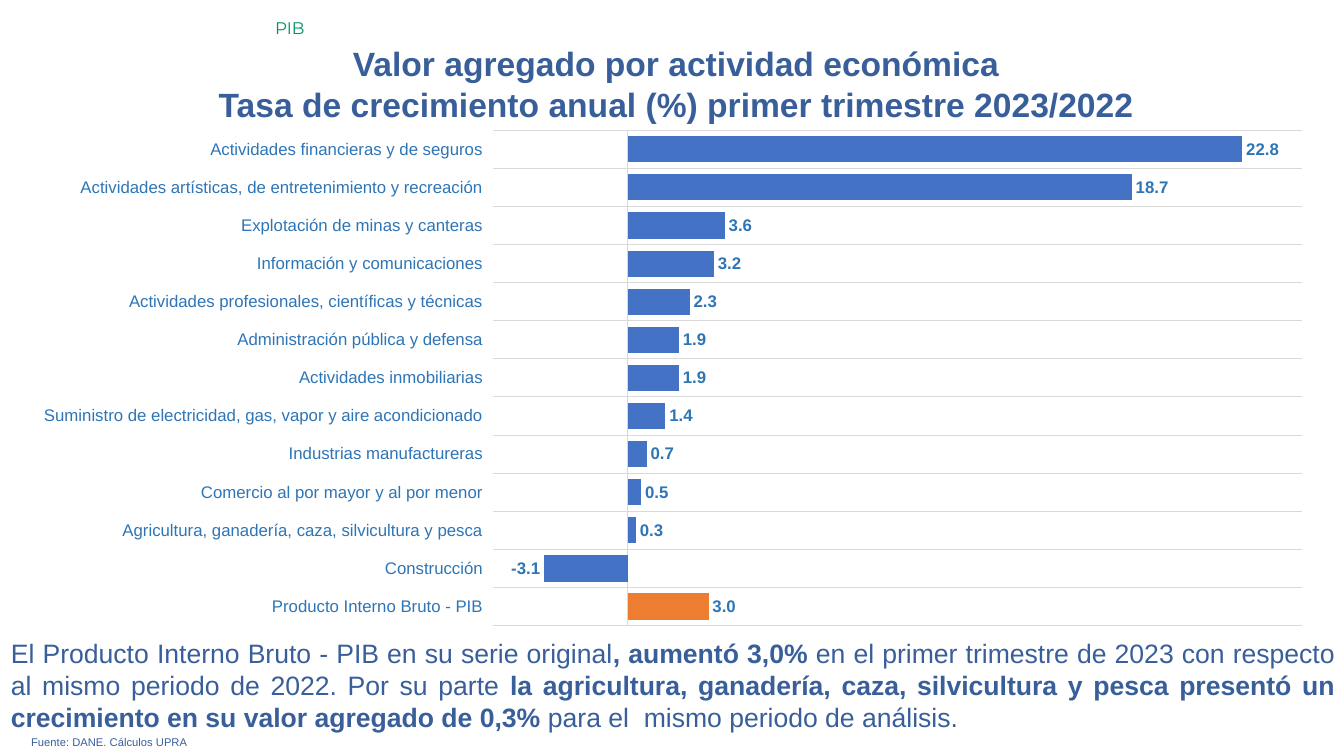
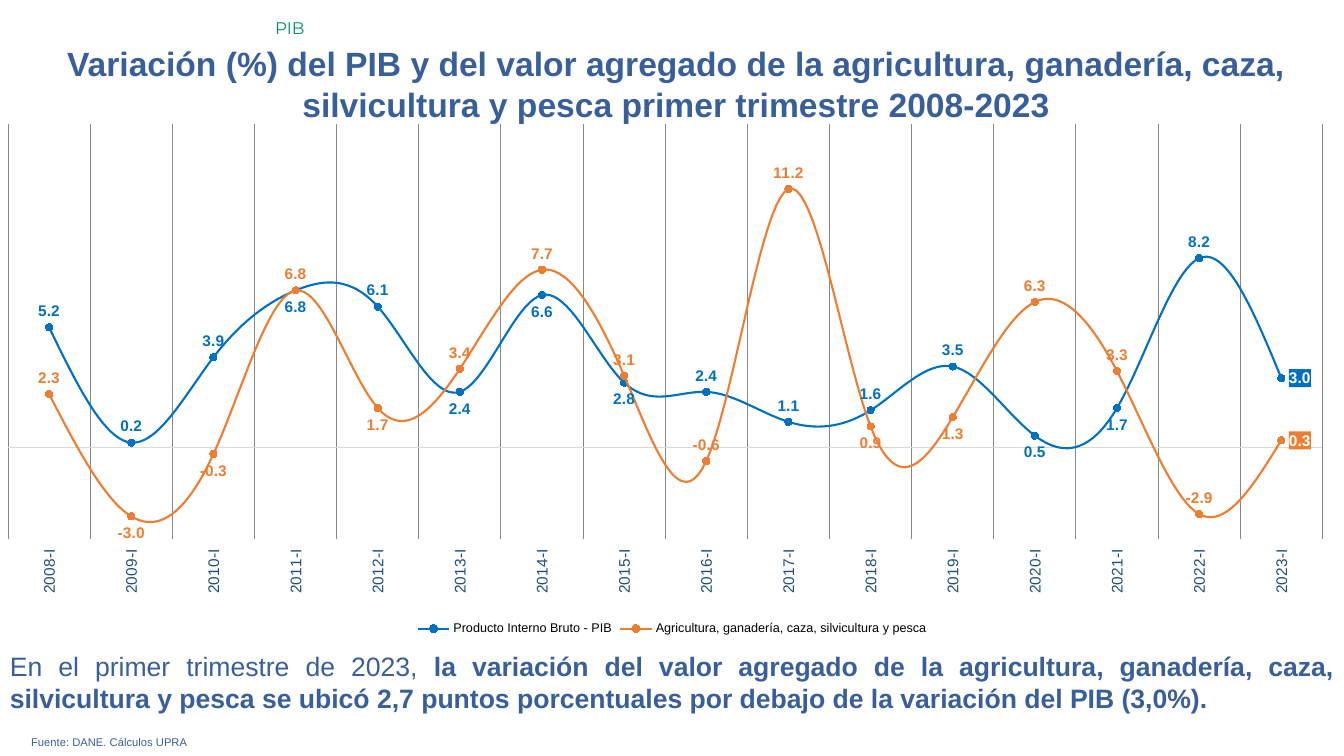
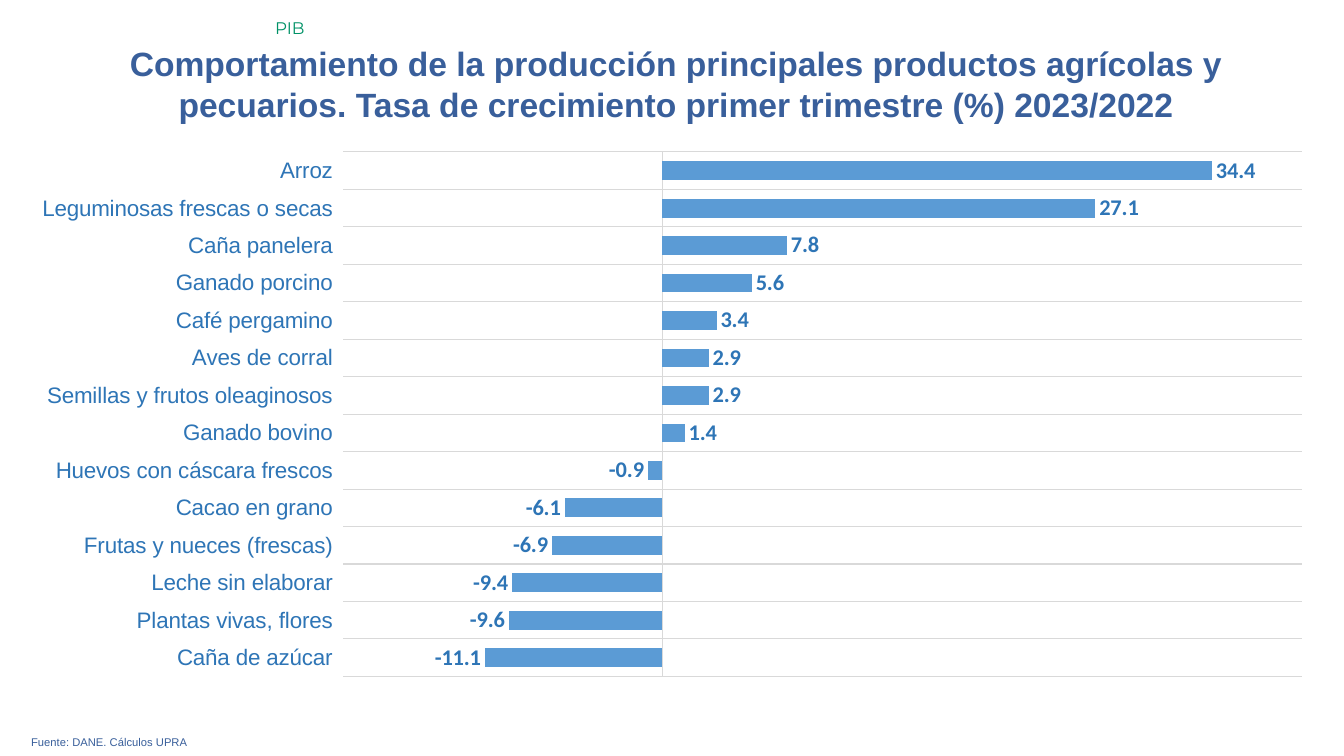
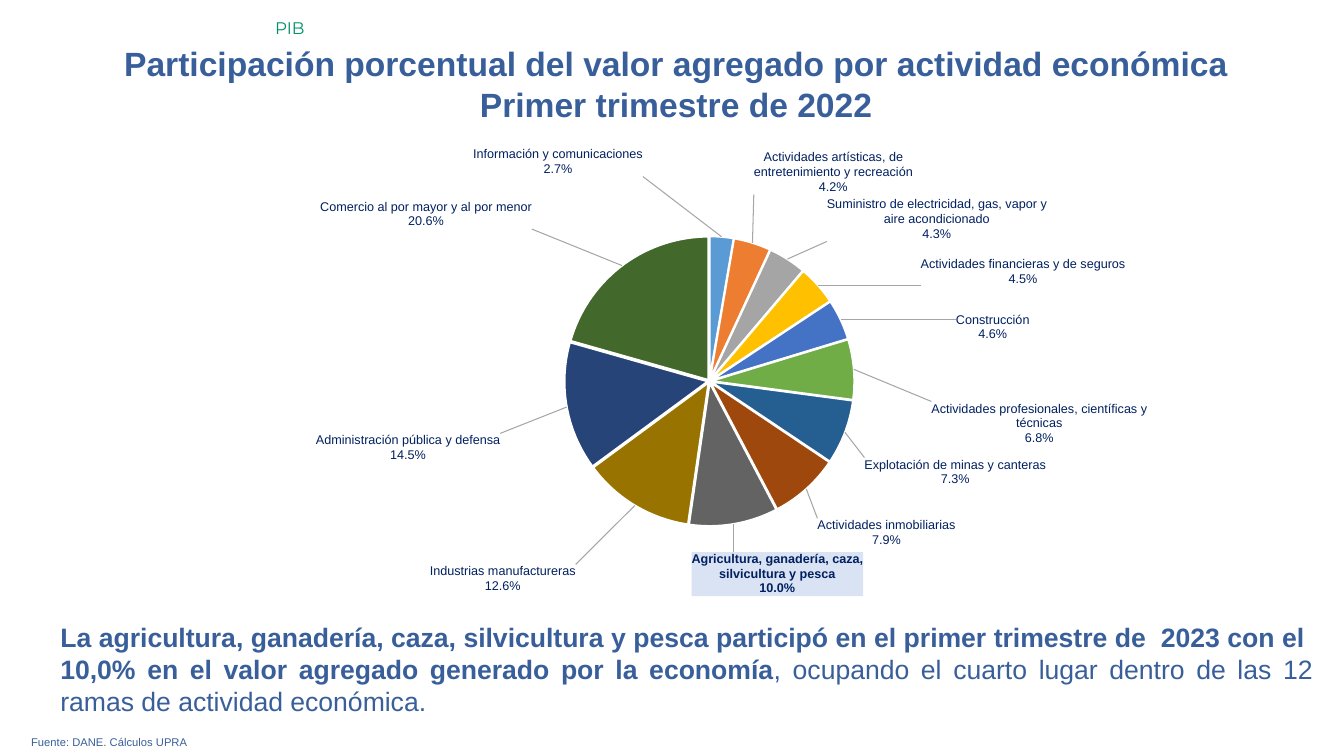
from math import cos, pi, radians, sin

from lxml.etree import SubElement
from pptx import Presentation
from pptx.chart.data import CategoryChartData as ChartData
from pptx.dml.color import RGBColor
from pptx.enum.chart import XL_CHART_TYPE as Kind
from pptx.enum.chart import XL_LABEL_POSITION as Pos
from pptx.enum.chart import XL_LEGEND_POSITION as Legend
from pptx.enum.chart import XL_MARKER_STYLE as Marker
from pptx.enum.chart import XL_TICK_LABEL_POSITION as TickPos
from pptx.enum.chart import XL_TICK_MARK as Tick
from pptx.enum.text import MSO_ANCHOR as Anchor
from pptx.enum.text import MSO_AUTO_SIZE as Fit
from pptx.enum.text import PP_ALIGN as Align
from pptx.oxml import parse_xml
from pptx.oxml.ns import nsdecls, qn
from pptx.util import Inches, Pt

COLORS = {
    "text": "395F9B", "green": "009267", "grid": "D9D9D9", "label": "2E75B6",
    "bar": "4472C4", "orange": "ED7D31", "sky": "5B9BD5", "line": "0070C0",
    "dates": "1F4E79", "navy": "002060", "pale": "DAE3F3", "lead": "A6A6A6",
    "black": "000000", "white": "FFFFFF",
}
SLICES = ["5B9BD5", "ED7D31", "A5A5A5", "FFC000", "4472C4", "70AD47",
          "255E91", "9E480E", "636363", "997300", "264478", "43682B"]
FARM = "Agricultura, ganadería, caza, silvicultura y pesca"
GDP = "Producto Interno Bruto - PIB"
SOURCE = "Fuente: DANE. Cálculos UPRA"

# Body text: (words, bold)
GROWTH = {
    "title": "Valor agregado por actividad económica\n"
             "Tasa de crecimiento anual (%) primer trimestre 2023/2022",
    "body": [
        ("El Producto Interno Bruto - PIB en su serie original", False),
        (", aumentó 3,0% ", True),
        ("en el primer trimestre de 2023 con respecto al mismo periodo de "
         "2022. Por su parte ", False),
        ("la agricultura, ganadería, caza, silvicultura y pesca presentó un "
         "crecimiento en su valor agregado de 0,3%", True),
        (" para el  mismo periodo de análisis.", False)],
    "rows": [
        (GDP, 3.0), ("Construcción", -3.1), (FARM, 0.3),
        ("Comercio al por mayor y al por menor", 0.5),
        ("Industrias manufactureras", 0.7),
        ("Suministro de electricidad, gas, vapor y aire acondicionado", 1.4),
        ("Actividades inmobiliarias", 1.9),
        ("Administración pública y defensa", 1.9),
        ("Actividades profesionales, científicas y técnicas", 2.3),
        ("Información y comunicaciones", 3.2),
        ("Explotación de minas y canteras", 3.6),
        ("Actividades artísticas, de entretenimiento y recreación", 18.7),
        ("Actividades financieras y de seguros", 22.8)],
}
TREND = {
    "title": "Variación (%) del PIB y del valor agregado de la agricultura, "
             "ganadería, caza, silvicultura y pesca primer trimestre 2008-2023",
    "body": [
        ("En el primer trimestre de 2023, ", False),
        ("la variación del valor agregado de la agricultura, ganadería, caza, "
         "silvicultura y pesca se ubicó 2,7 puntos porcentuales por debajo de "
         "la variación del PIB (3,0%).", True)],
    "cats": [f"{year}-I" for year in range(2008, 2024)],
    # name, color, marker color, usual label side, other side, its points, values
    "series": [
        (GDP, "line", "line", Pos.ABOVE, Pos.BELOW, (3, 5, 6, 7, 12, 13),
         [5.2, 0.2, 3.9, 6.8, 6.1, 2.4, 6.6, 2.8,
          2.4, 1.1, 1.6, 3.5, 0.5, 1.7, 8.2, 3.0]),
        (FARM, "orange", "orange", Pos.BELOW, Pos.ABOVE,
         (0, 3, 5, 6, 7, 8, 9, 12, 13, 14),
         [2.3, -3.0, -0.3, 6.8, 1.7, 3.4, 7.7, 3.1,
          -0.6, 11.2, 0.9, 1.3, 6.3, 3.3, -2.9, 0.3])],
}
CROPS = {
    "title": "Comportamiento de la producción principales productos agrícolas y "
             "pecuarios. Tasa de crecimiento primer trimestre (%) 2023/2022",
    "rows": [
        ("Caña de azúcar", -11.1), ("Plantas vivas, flores", -9.6),
        ("Leche sin elaborar", -9.4), ("Frutas y nueces (frescas)", -6.9),
        ("Cacao en grano", -6.1), ("Huevos con cáscara frescos", -0.9),
        ("Ganado bovino", 1.4), ("Semillas y frutos oleaginosos", 2.9),
        ("Aves de corral", 2.9), ("Café pergamino", 3.4),
        ("Ganado porcino", 5.6), ("Caña panelera", 7.8),
        ("Leguminosas frescas o secas", 27.1), ("Arroz", 34.4)],
}
SHARE = {
    "title": "Participación porcentual del valor agregado por actividad "
             "económica\nPrimer trimestre de 2022",
    "body": [
        ("La agricultura, ganadería, caza, silvicultura y pesca participó en el "
         "primer trimestre de  2023 con el  10,0% en el valor agregado generado "
         "por la economía", True),
        (", ocupando el cuarto lugar dentro de las 12 ramas de actividad "
         "económica.", False)],
    # name, value, label left, top, width, lines
    "rows": [
        ("Información y comunicaciones", 2.7, 4.69, 1.52, 1.68, 2),
        ("Actividades artísticas, de entretenimiento y recreación",
         4.2, 7.46, 1.55, 1.57, 3),
        ("Suministro de electricidad, gas, vapor y aire acondicionado",
         4.3, 8.17, 2.01, 2.18, 3),
        ("Actividades financieras y de seguros", 4.5, 9.09, 2.59, 2.02, 2),
        ("Construcción", 4.6, 9.43, 3.13, 0.72, 2),
        ("Actividades profesionales, científicas y técnicas",
         6.8, 9.18, 3.99, 2.13, 3),
        ("Explotación de minas y canteras", 7.3, 8.52, 4.52, 1.81, 2),
        ("Actividades inmobiliarias", 7.9, 8.07, 5.1, 1.37, 2),
        (FARM, 10.0, 6.85, 5.42, 1.71, 3),
        ("Industrias manufactureras", 12.6, 4.29, 5.55, 1.45, 2),
        ("Administración pública y defensa", 14.5, 3.19, 4.29, 1.83, 2),
        ("Comercio al por mayor y al por menor", 20.6, 3.21, 2.03, 2.1, 2)],
}


def rgb(name):
    return RGBColor.from_string(COLORS.get(name, name))


def style(font, size, color, bold=False, face="Arial"):
    font.size, font.bold, font.name = Pt(size), bold, face
    font.color.rgb = rgb(color)


def add_text(slide, box, parts, size, color="text", align=Align.JUSTIFY,
             face="Arial", indent=0):
    frame = slide.shapes.add_textbox(*map(Inches, box)).text_frame
    frame.word_wrap = True
    para = frame.paragraphs[0]
    para.alignment = align
    if indent:
        para._p.get_or_add_pPr().set("marL", str(Inches(indent)))
    for words, bold in parts:
        run = para.add_run()
        run.text = words
        style(run.font, size, color, bold, face)


def add_slide(deck, title):
    """Add a slide with its title, section name and source line."""
    slide = deck.slides.add_slide(deck.slide_layouts[5])
    head = slide.shapes.title
    head.left, head.top, head.width, head.height = map(
        Inches, (0.45, 0.38, 12.51, 0.91))
    frame = head.text_frame
    frame.text = title
    frame.word_wrap, frame.auto_size = True, Fit.NONE
    frame.vertical_anchor = Anchor.TOP
    for para in frame.paragraphs:
        para.alignment = Align.CENTER
        for run in para.runs:
            style(run.font, 24, "text", True)
    add_text(slide, (0.21, 7.25, 12.91, 0.24), [(SOURCE, False)], 8)
    add_text(slide, (2.63, 0.13, 10.7, 0.3), [("PIB", False)], 12, "green",
             Align.LEFT, "Montserrat")
    return slide


def add_chart(slide, kind, box, cats, series, plot, size=10, color="black"):
    """Add a chart whose inner plot area is given as fractions of its box."""
    data = ChartData(number_format="0.0")
    data.categories = cats
    for name, vals in series:
        data.add_series(name, vals)
    chart = slide.shapes.add_chart(kind, *map(Inches, box), data).chart
    chart.has_title = chart.has_legend = False
    style(chart.font, size, color)
    area = chart._chartSpace.chart.plotArea
    for old in area.findall(qn("c:layout")):
        area.remove(old)
    area.insert(0, layout(plot, inner=True))
    return chart


def layout(values, inner=False):
    """Make a manual layout: a plot area, or the shift of a label."""
    node = parse_xml(f"<c:layout {nsdecls('c')}><c:manualLayout/></c:layout>")
    rules = [("layoutTarget", "inner"), ("xMode", "edge"), ("yMode", "edge")]
    places = [(key, f"{val:.4f}") for key, val in zip("xywh", values)]
    for key, val in (rules if inner else []) + places:
        SubElement(node[0], qn(f"c:{key}")).set("val", val)
    return node


def set_axes(chart, low, high, size, color, grid=False):
    cat, val = chart.category_axis, chart.value_axis
    cat.tick_label_position = TickPos.LOW
    cat.major_tick_mark = cat.minor_tick_mark = Tick.NONE
    style(cat.tick_labels.font, size, color)
    cat.has_major_gridlines = grid
    for line in [cat.format.line] + [cat.major_gridlines.format.line] * grid:
        line.color.rgb, line.width = rgb("grid"), Pt(0.75)
    val.has_major_gridlines = val.visible = False
    val.minimum_scale, val.maximum_scale = low, high


def set_labels(series, size, color, pos, bold=True, face="Arial", form="0.0"):
    labels = series.data_labels
    labels.show_value, labels.position = True, pos
    labels.number_format, labels.number_format_is_linked = form, False
    style(labels.font, size, color, bold, face)
    return labels


def set_label(series, i, size, color, pos, bold=True, fill=None):
    """Format the label of one point and return its XML node."""
    label = series.points[i].data_label
    style(label.font, size, color, bold)
    label.position = pos
    node = series._element.xpath(f".//c:dLbl[c:idx/@val='{i}']")[0]
    if fill:
        node.find(qn("c:txPr")).addprevious(parse_xml(
            f"<c:spPr {nsdecls('c', 'a')}><a:solidFill>"
            f"<a:srgbClr val='{COLORS[fill]}'/></a:solidFill></c:spPr>"))
    return node


def add_bars(slide, box, rows, plot, span, size, color, gap, face="Arial"):
    cats, vals = zip(*rows)
    chart = add_chart(slide, Kind.BAR_CLUSTERED, box, cats,
                      [("Series 1", vals)], plot)
    set_axes(chart, *span, size, "label", grid=True)
    bars = chart.plots[0]
    bars.gap_width, bars.vary_by_categories = gap, False
    series = bars.series[0]
    series.invert_if_negative = False
    series.format.fill.solid()
    series.format.fill.fore_color.rgb = rgb(color)
    set_labels(series, size, "label", Pos.OUTSIDE_END, face=face)
    return series


def growth_slide(deck):
    slide = add_slide(deck, GROWTH["title"])
    add_text(slide, (0.01, 6.27, 13.33, 1.06), GROWTH["body"], 19)
    series = add_bars(slide, (0.17, 1.19, 13, 5.12), GROWTH["rows"],
                      (0.363, 0.02, 0.617, 0.96), (-5, 25), 12, "bar", 46)
    fill = series.points[0].format.fill
    fill.solid()
    fill.fore_color.rgb = rgb("orange")


def trend_slide(deck):
    slide = add_slide(deck, TREND["title"])
    add_text(slide, (0, 6.4, 13.33, 0.74), TREND["body"], 19)
    cats, rows = TREND["cats"], TREND["series"]
    chart = add_chart(slide, Kind.LINE_MARKERS, (0, 1.23, 13.33, 5.12), cats,
                      [(row[0], row[-1]) for row in rows],
                      (0.006, 0, 0.978, 0.805))
    set_axes(chart, -4, 14, 11, "dates")
    turn = chart.category_axis._element.find(qn("c:txPr")).find(qn("a:bodyPr"))
    turn.set("rot", "-5400000")
    turn.set("vert", "horz")
    chart.has_legend = True
    chart.legend.position = Legend.BOTTOM
    chart.legend.include_in_layout = False
    style(chart.legend.font, 9, "black")
    chart.plots[0].vary_by_categories = False
    for series, row in zip(chart.plots[0].series, rows):
        _, color, dot, side, other, points, _ = row
        series.smooth = True
        series.format.line.color.rgb = rgb(color)
        series.format.line.width = Pt(1.5)
        mark = series.marker
        mark.style, mark.size = Marker.CIRCLE, 5
        mark.format.fill.solid()
        mark.format.fill.fore_color.rgb = rgb(dot)
        mark.format.line.color.rgb = rgb(color)
        set_labels(series, 11, color, side)
        for i in points:
            set_label(series, i, 11, color, other)
        set_label(series, len(cats) - 1, 11, "white", Pos.RIGHT, fill=color)


def crops_slide(deck):
    slide = add_slide(deck, CROPS["title"])
    add_bars(slide, (0.16, 1.4, 13.01, 5.42), CROPS["rows"],
             (0.249, 0.02, 0.731, 0.96), (-20, 40), 16, "sky", 100, "Calibri")


def split(node):
    """Put each part of a label on its own line."""
    mark = parse_xml(f"<c:separator {nsdecls('c')}>\n</c:separator>")
    node.find(qn("c:showBubbleSize")).addnext(mark)


def share_slide(deck):
    slide = add_slide(deck, SHARE["title"])
    add_text(slide, (0, 6.11, 13.12, 1.06), SHARE["body"], 19, indent=0.5)
    rows = SHARE["rows"]
    box, plot = (1.11, 1.4, 11.11, 4.7), (0.184, 0.201, 0.699, 0.612)
    left, top, wide, high = box
    chart = add_chart(slide, Kind.PIE, box, [row[0] for row in rows],
                      [("Series 1", [row[1] for row in rows])], plot, 9, "navy")
    pie = chart.plots[0]
    pie.vary_by_categories = True
    series = pie.series[0]
    labels = set_labels(series, 9, "navy", Pos.BEST_FIT, False, form="0.0%")
    labels.show_value = False
    labels.show_category_name = labels.show_percentage = True
    group = labels._element
    split(group)
    group.append(parse_xml(
        f"<c:leaderLines {nsdecls('c', 'a')}><c:spPr><a:ln w='9525'><a:solidFill>"
        f"<a:srgbClr val='{COLORS['lead']}'/></a:solidFill></a:ln></c:spPr>"
        "</c:leaderLines>"))

    mid_x = left + wide * (plot[0] + plot[2] / 2)
    mid_y = top + high * (plot[1] + plot[3] / 2)
    radius, near, done = high * plot[3] / 2, sin(radians(5)), 0
    total = sum(row[1] for row in rows)
    for i, (name, val, x, y, width, lines) in enumerate(rows):
        form = series.points[i].format
        form.fill.solid()
        form.fill.fore_color.rgb = rgb(SLICES[i])
        form.line.color.rgb, form.line.width = rgb("white"), Pt(1.5)
        # A label first sits outside the rim; shift it from there to its place
        angle = 2 * pi * (done + val / 2) / total
        done += val
        tall = 0.145 * lines
        dx, dy = sin(angle), -cos(angle)
        back_x, back_y = [0.5 if abs(d) < near else float(d < 0)
                          for d in (dx, dy)]
        home_x = mid_x + radius * dx - width * back_x
        home_y = mid_y + radius * dy - tall * back_y
        farm = name == FARM
        node = set_label(series, i, 9, "navy", Pos.BEST_FIT, farm,
                         "pale" if farm else None)
        node.find(qn("c:idx")).addnext(
            layout(((x - home_x) / wide, (y - home_y) / high)))
        for key, on in (("Val", 0), ("CatName", 1), ("Percent", 1)):
            node.find(qn(f"c:show{key}")).set("val", str(on))
        split(node)
    burst = parse_xml(f"<c:explosion {nsdecls('c')} val='1'/>")
    series._element.find(qn("c:dPt")).addprevious(burst)


def main():
    deck = Presentation()
    deck.slide_width, deck.slide_height = Inches(13.33), Inches(7.5)
    for build in (growth_slide, trend_slide, crops_slide, share_slide):
        build(deck)
    deck.save("out.pptx")


if __name__ == "__main__":
    main()
